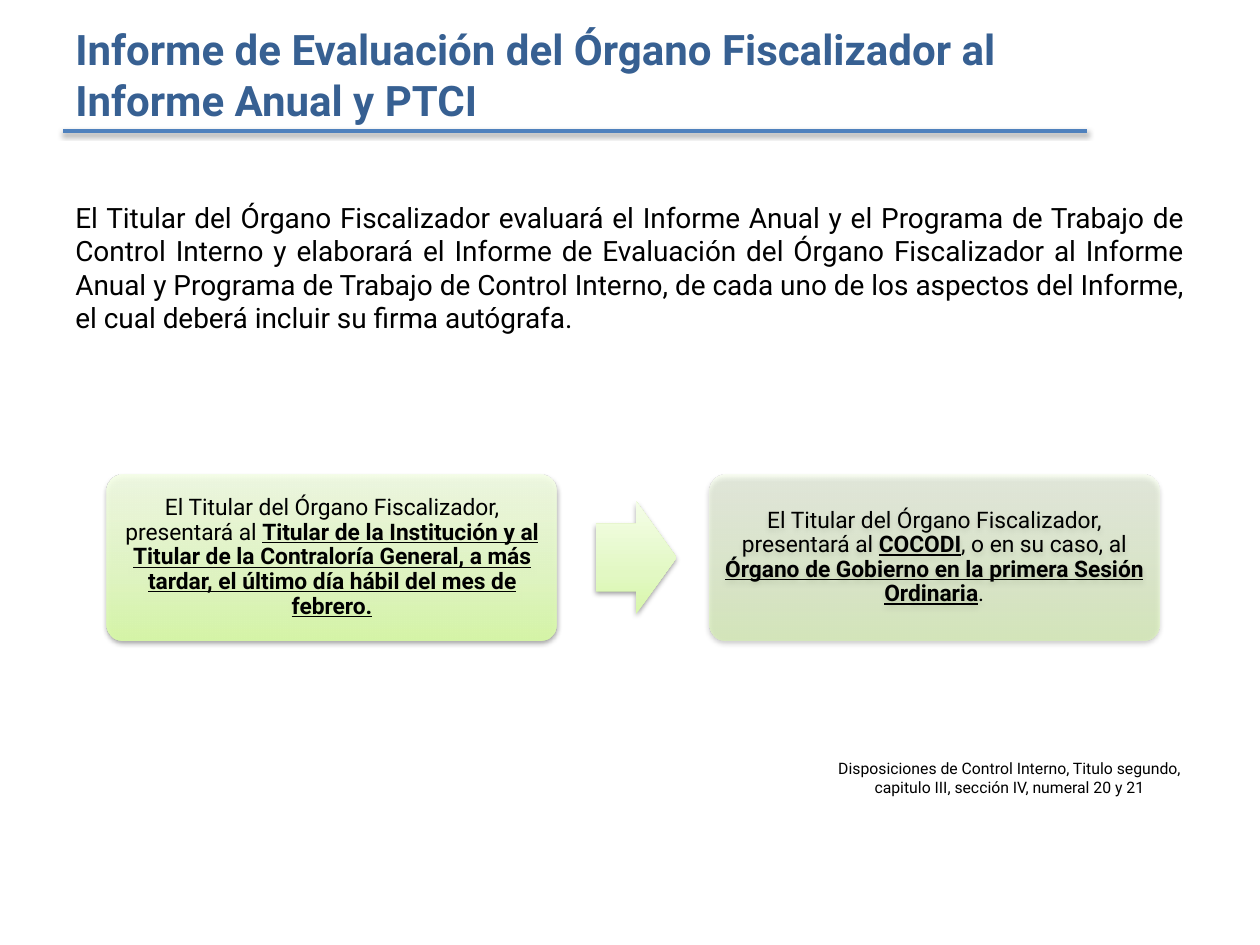
from lxml.etree import SubElement
from pptx import Presentation
from pptx.dml.color import RGBColor
from pptx.enum.shapes import MSO_CONNECTOR, MSO_SHAPE
from pptx.enum.text import MSO_ANCHOR, PP_ALIGN
from pptx.oxml.ns import qn
from pptx.util import Inches, Pt

COLORS = {"text": "000000", "title": "376092", "rule": "4F81BD", "shadow": "000000"}
BOX_GRADIENT = [(0, "DAFDA7"), (35, "E4FCC2"), (100, "F5FFE7")]
ARROW_GRADIENT = [(0, "D7F7A9"), (35, "E2F8C3"), (100, "F4FDE7")]


class SlideBuilder:
    """Places elements on a grid of 100 columns by 75 rows."""

    font = "Roboto"
    columns, rows = 100, 75

    def __init__(self, prs):
        self.slide = prs.slides.add_slide(prs.slide_layouts[6])
        self.cell_width = prs.slide_width / self.columns
        self.cell_height = prs.slide_height / self.rows

    def place(self, *lengths):
        """Turn alternating column and row lengths into slide units."""
        units = (self.cell_width, self.cell_height)
        return [round(length * units[i % 2]) for i, length in enumerate(lengths)]

    def fill_frame(self, frame, paragraphs, size, color="text", align=PP_ALIGN.LEFT,
                   bold=None, line_spacing=None, anchor=MSO_ANCHOR.TOP):
        """Fill a frame; each paragraph lists (text, emphasized) pairs."""
        frame.word_wrap = True
        frame.vertical_anchor = anchor
        for i, runs in enumerate(paragraphs):
            paragraph = frame.add_paragraph() if i else frame.paragraphs[0]
            paragraph.alignment = align
            paragraph.line_spacing = line_spacing
            font = paragraph.font
            font.name, font.size, font.bold = self.font, Pt(size), bold
            font.color.rgb = RGBColor.from_string(COLORS[color])
            for text, emphasized in runs:
                run = paragraph.add_run()
                run.text = text
                if emphasized:
                    run.font.bold = run.font.underline = True

    def text(self, area, lines, size, **style):
        frame = self.slide.shapes.add_textbox(*self.place(*area)).text_frame
        self.fill_frame(frame, [[(line, False)] for line in lines], size, **style)

    def shadow(self, shape):
        effects = SubElement(shape._element.spPr, qn("a:effectLst"))
        outer = SubElement(effects, qn("a:outerShdw"), blurRad=str(Pt(3.1)),
                           dist=str(Pt(1.6)), dir="5400000", rotWithShape="0")
        color = SubElement(outer, qn("a:srgbClr"), val=COLORS["shadow"])
        SubElement(color, qn("a:alpha"), val="38000")

    def rule(self, start, end, width):
        line = self.slide.shapes.add_connector(
            MSO_CONNECTOR.STRAIGHT, *self.place(*start, *end))
        line.line.color.rgb = RGBColor.from_string(COLORS["rule"])
        line.line.width = Pt(width)
        self.shadow(line)

    def gradient_shape(self, kind, area, adjustments, gradient, opacity=100):
        """Add a borderless shape shaded from bottom to top."""
        shape = self.slide.shapes.add_shape(kind, *self.place(*area))
        for i, value in enumerate(adjustments):
            shape.adjustments[i] = value
        shape.fill.gradient()
        shape.fill.gradient_angle = 90
        stops = shape._element.spPr.find(qn("a:gradFill")).find(qn("a:gsLst"))
        for stop in list(stops):
            stops.remove(stop)
        for position, value in gradient:
            stop = SubElement(stops, qn("a:gs"), pos=str(position * 1000))
            color = SubElement(stop, qn("a:srgbClr"), val=value)
            if opacity < 100:
                SubElement(color, qn("a:alpha"), val=str(opacity * 1000))
        shape.line.fill.background()
        self.shadow(shape)
        return shape

    def step(self, area, runs, opacity):
        box = self.gradient_shape(MSO_SHAPE.ROUNDED_RECTANGLE, area, [0.1],
                                  BOX_GRADIENT, opacity)
        frame = box.text_frame
        frame.margin_left = frame.margin_right = Inches(0.05)
        frame.margin_top = frame.margin_bottom = Inches(0.05)
        self.fill_frame(frame, [runs], 13, align=PP_ALIGN.CENTER, line_spacing=0.9,
                        anchor=MSO_ANCHOR.MIDDLE)

    def arrow(self, area):
        self.gradient_shape(MSO_SHAPE.RIGHT_ARROW, area, [0.6, 0.5], ARROW_GRADIENT)


def main():
    prs = Presentation()
    prs.slide_width, prs.slide_height = Inches(10), Inches(7.5)
    page = SlideBuilder(prs)

    page.text((5, 15.4, 90, 11.8), [
        "El Titular del Órgano Fiscalizador evaluará el Informe Anual y el Programa "
        "de Trabajo de Control Interno y elaborará el Informe de Evaluación del "
        "Órgano Fiscalizador al Informe Anual y Programa de Trabajo de Control "
        "Interno, de cada uno de los aspectos del Informe, el cual deberá incluir "
        "su firma autógrafa."], 16, align=PP_ALIGN.JUSTIFY)
    page.text((5, 3, 90, 5.8),
              ["Informe de Evaluación del Órgano Fiscalizador al",
               "Informe Anual y PTCI"],
              24, color="title", bold=True, anchor=MSO_ANCHOR.MIDDLE)
    page.rule((5, 10.4), (86.3, 10.4), 2)

    intro = ("El Titular del Órgano Fiscalizador, presentará al ", False)
    steps = [
        (90, [intro,
              ("Titular de la Institución y al Titular de la Contraloría General, "
               "a más tardar, el último día hábil del mes de febrero.", True)]),
        (50, [intro, ("COCODI", True), (", o en su caso, al ", False),
              ("Órgano de Gobierno en la primera Sesión Ordinaria", True),
              (".", False)]),
    ]
    first_left, step_pitch = 8.5, 47.8
    for i, (opacity, runs) in enumerate(steps):
        page.step((first_left + i * step_pitch, 37.7, 35.7, 13.1), runs, opacity)
    page.arrow((47.3, 39.8, 6.4, 8.9))

    page.text((64.9, 59.7, 30.4, 4),
              ["Disposiciones de Control Interno, Titulo segundo, capitulo III, "
               "sección IV, numeral 20 y 21"], 9, align=PP_ALIGN.CENTER)
    prs.save("out.pptx")


if __name__ == "__main__":
    main()
